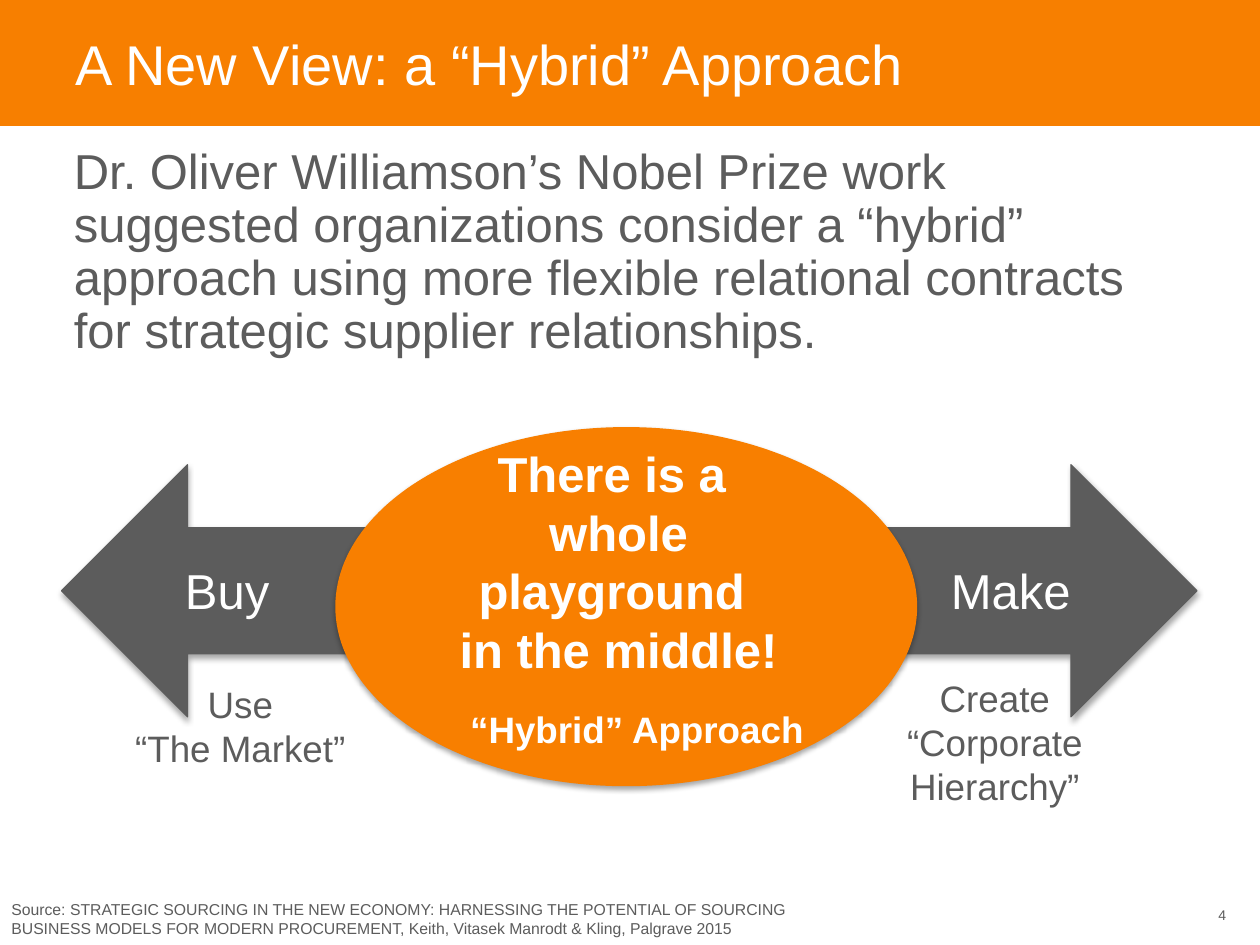
from lxml import etree
from pptx import Presentation
from pptx import util as u
from pptx.dml.color import RGBColor
from pptx.enum import shapes, text
from pptx.oxml import ns

ORANGE, ELLIPSE_ORANGE, GRAY, WHITE = "F77F00", "F87F00", "5C5C5C", "FFFFFF"
LEFT, CENTER = text.PP_ALIGN.LEFT, text.PP_ALIGN.CENTER


def write(frame, lines, size, color, align=LEFT, bold=False):
    for i, line in enumerate(lines):
        paragraph = frame.paragraphs[0] if i == 0 else frame.add_paragraph()
        paragraph.alignment = align
        run = paragraph.add_run()
        run.text = line
        run.font.name = "Arial"
        run.font.size = u.Pt(size)
        run.font.bold = bold
        run.font.color.rgb = RGBColor.from_string(color)


def add_figure(kind, box, color, shadow=False):
    figure = slide.shapes.add_shape(kind, *[u.Cm(v) for v in box])
    figure.shadow.inherit = False
    figure.fill.solid()
    figure.fill.fore_color.rgb = RGBColor.from_string(color)
    figure.line.fill.background()
    if shadow:
        effects = figure._element.spPr.find(ns.qn("a:effectLst"))
        outer = etree.SubElement(effects, ns.qn("a:outerShdw"), blurRad="40000",
                                 dist="23000", dir="5400000", rotWithShape="0")
        tint = etree.SubElement(outer, ns.qn("a:srgbClr"), val="000000")
        etree.SubElement(tint, ns.qn("a:alpha"), val="35000")
    return figure


deck = Presentation()
deck.slide_width, deck.slide_height = u.Cm(25.4), u.Cm(19.05)
slide = deck.slides.add_slide(deck.slide_layouts[5])

# Title on an orange band, which goes behind the placeholder
title = slide.shapes.title
band = add_figure(shapes.MSO_SHAPE.RECTANGLE, (0, 0, 25.4, 2.54), ORANGE)
title._element.addprevious(band._element)
title.left, title.top, title.width, title.height = [
    u.Cm(v) for v in (1.27, 0.18, 22.86, 2.18)]
title.text_frame.vertical_anchor = text.MSO_ANCHOR.MIDDLE
write(title.text_frame, ["A New View: a “Hybrid” Approach"], 32, WHITE)

# Buy-to-make arrow with the hybrid ellipse in the middle
arrow = add_figure(shapes.MSO_SHAPE.LEFT_RIGHT_ARROW, (1.24, 9.37, 22.89, 5.08), GRAY, True)
arrow.line.color.rgb = RGBColor.from_string(GRAY)
arrow.line.width = u.Pt(0.75)
add_figure(shapes.MSO_SHAPE.OVAL, (6.76, 8.61, 11.73, 7.24), ELLIPSE_ORANGE, True)

# Labels: box in cm, lines, size, colour, alignment, bold, wrap
labels = [
    ((18.92, 11.18, 2.95, 1.45), ["Make"], 28, WHITE, LEFT, False, False),
    ((3.48, 11.18, 2.24, 1.45), ["Buy"], 28, WHITE, LEFT, False, False),
    ((18.01, 13.49, 4.09, 2.95), ["Create", "“Corporate", "Hierarchy”"],
     21, GRAY, CENTER, False, False),
    ((1.24, 13.61, 7.21, 2.08), ["Use", "“The Market”"], 21, GRAY, CENTER, False, True),
    ((8.05, 8.81, 8.84, 5.05), ["There is a ", "whole playground ", "in the middle!"],
     28, WHITE, CENTER, True, True),
    ((7.95, 14.12, 9.78, 1.17), ["“Hybrid” Approach"], 21, WHITE, CENTER, True, True),
]
for box, lines, size, color, align, bold, wrap in labels:
    label = slide.shapes.add_textbox(*[u.Cm(v) for v in box]).text_frame
    label.word_wrap = wrap
    label.auto_size = text.MSO_AUTO_SIZE.SHAPE_TO_FIT_TEXT
    write(label, lines, size, color, align, bold)

# Introductory statement
statement = slide.shapes.add_textbox(u.Cm(1.24), u.Cm(2.84), u.Cm(22.89), u.Cm(4.57)).text_frame
statement.word_wrap = True
write(statement, ["Dr. Oliver Williamson’s Nobel Prize work suggested organizations consider "
                  "a “hybrid” approach using more flexible relational contracts for strategic "
                  "supplier relationships."], 28, GRAY)
statement.paragraphs[0].line_spacing = 0.9

# Source line
source = slide.shapes.add_textbox(0, u.Cm(18.03), u.Cm(16.33), u.Cm(0.99)).text_frame
source.word_wrap = True
source.margin_left = source.margin_right = u.Cm(0.23)
source.margin_top = source.margin_bottom = u.Cm(0.1)
write(source, ["Source: STRATEGIC SOURCING IN THE NEW ECONOMY: HARNESSING THE POTENTIAL OF "
               "SOURCING BUSINESS MODELS FOR MODERN PROCUREMENT, Keith, Vitasek Manrodt "
               "& Kling, Palgrave 2015"], 9, GRAY)

# Slide number
number = slide.shapes.add_textbox(u.Cm(24.13), u.Cm(17.98), u.Cm(1.02), u.Cm(0.94)).text_frame
number.word_wrap = True
number.vertical_anchor = text.MSO_ANCHOR.MIDDLE
write(number, ["4"], 8, GRAY, CENTER)

deck.save("out.pptx")
